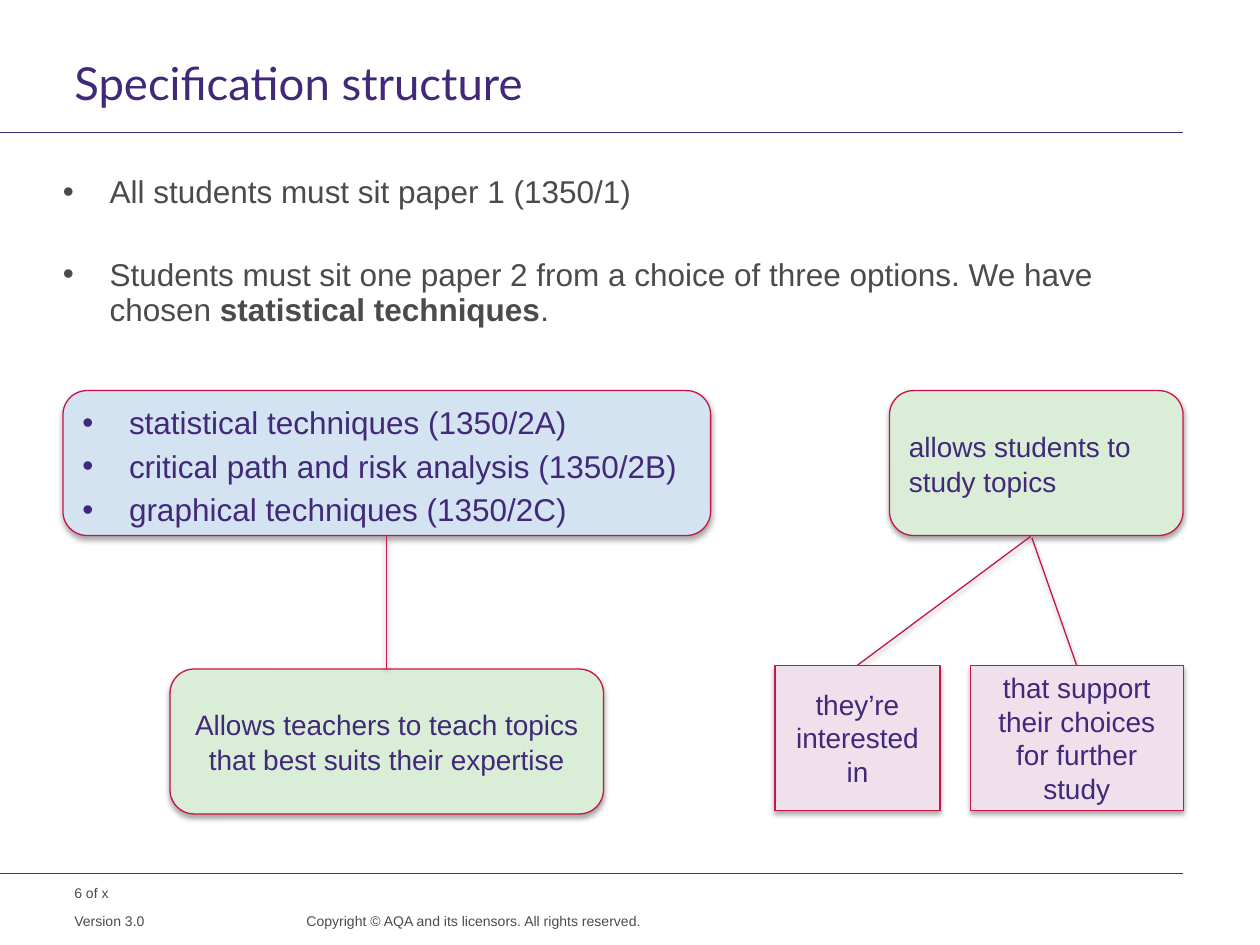
from dataclasses import dataclass
from typing import Optional

from lxml.etree import SubElement
from pptx import Presentation
from pptx.dml.color import RGBColor
from pptx.enum.shapes import MSO_CONNECTOR, MSO_SHAPE as Preset
from pptx.enum.text import MSO_ANCHOR as Anchor, PP_ALIGN as Align
from pptx.oxml.ns import qn
from pptx.util import Emu, Inches, Pt


@dataclass(frozen=True)
class Theme:
    heading_font: str = "Lato"
    body_font: str = "Arial"
    purple: str = "412878"
    grey: str = "4B4B4B"
    red: str = "C81448"
    link_red: str = "C8194B"
    blue_fill: str = "D3E3F2"
    green_fill: str = "D9EDD7"
    pink_fill: str = "EFE0EC"
    title_size: int = 26
    body_size: int = 18
    box_size: int = 16
    footer_size: int = 8
    rule_width: float = 0.6
    outline_width: float = 0.75


@dataclass(frozen=True)
class Area:
    """Columns and rows from the top left of the slide grid."""
    col: float
    row: float
    cols: float
    rows: float


@dataclass(frozen=True)
class Box:
    area: Area
    preset: Preset
    fill: str
    paragraphs: tuple
    text_format: dict
    pointer: Optional[tuple] = None


THEME = Theme()
COLUMNS, ROWS = 100, 75
LEFT, INDENTED, RIGHT = 5, 5.9, 93.9
BOX_ROWS = 11.5
UPPER, LOWER, LOWER_LEFT = 31, 52.8, 53.1
HANGING = 0.37

presentation = Presentation()
presentation.slide_width, presentation.slide_height = Inches(10), Inches(7.5)
slide = presentation.slides.add_slide(presentation.slide_layouts[6])


def x(col: float) -> Emu:
    return Emu(round(presentation.slide_width * col / COLUMNS))


def y(row: float) -> Emu:
    return Emu(round(presentation.slide_height * row / ROWS))


def frame(area: Area) -> tuple:
    return x(area.col), y(area.row), x(area.cols), y(area.rows)


def write(shape, paragraphs: tuple, *, size: float, color: str = THEME.purple,
          font: str = THEME.body_font, align=Align.LEFT, anchor=Anchor.TOP,
          spacing=1.0, before: float = 0, bullet: bool = False,
          insets: tuple = (0, 0, 0, 0)) -> None:
    """Fill a shape; a paragraph is a tuple of runs, every second one bold."""
    text = shape.text_frame
    text.word_wrap = True
    text.vertical_anchor = anchor
    (text.margin_left, text.margin_top,
     text.margin_right, text.margin_bottom) = map(Inches, insets)
    for index, runs in enumerate(paragraphs):
        paragraph = text.add_paragraph() if index else text.paragraphs[0]
        if bullet:
            properties = paragraph._p.get_or_add_pPr()
            properties.set("marL", str(Inches(HANGING)))
            properties.set("indent", str(-Inches(HANGING)))
            SubElement(properties, qn("a:buFont"), typeface="Arial")
            SubElement(properties, qn("a:buChar"), char="•")
        paragraph.alignment = align
        paragraph.line_spacing = spacing
        paragraph.space_before = Pt(before if index else 0)
        paragraph.font.size = Pt(size)
        for position, words in enumerate(runs):
            run = paragraph.add_run()
            run.text = words
            run.font.name, run.font.size = font, Pt(size)
            run.font.bold = position % 2 == 1
            run.font.color.rgb = RGBColor.from_string(color)


def add_text(area: Area, *paragraphs: tuple, **text_format) -> None:
    write(slide.shapes.add_textbox(*frame(area)), paragraphs, **text_format)


def set_line(shape, color: str, width: float) -> None:
    shape.line.color.rgb = RGBColor.from_string(color)
    shape.line.width = Pt(width)


def set_effects(shape, opacity: int = 0, distance: float = 1.8) -> None:
    """Give a downward shadow, or none when opacity is zero."""
    effects = SubElement(shape.element.spPr, qn("a:effectLst"))
    if opacity:
        shadow = SubElement(effects, qn("a:outerShdw"), blurRad=str(Pt(3.1)),
                            dist=str(Pt(distance)), dir="5400000", rotWithShape="0")
        black = SubElement(shadow, qn("a:srgbClr"), val="000000")
        SubElement(black, qn("a:alpha"), val=str(opacity * 1000))


def add_line(start: tuple, end: tuple, color: str, width: float, **shadow) -> None:
    line = slide.shapes.add_connector(
        MSO_CONNECTOR.STRAIGHT, x(start[0]), y(start[1]), x(end[0]), y(end[1]))
    set_line(line, color, width)
    set_effects(line, **shadow)


def add_box(box: Box) -> None:
    shape = slide.shapes.add_shape(box.preset, *frame(box.area))
    for index, value in enumerate(box.pointer or ()):
        shape.adjustments[index] = value
    shape.fill.solid()
    shape.fill.fore_color.rgb = RGBColor.from_string(box.fill)
    set_line(shape, THEME.red, THEME.outline_width)
    set_effects(shape, opacity=35)
    write(shape, box.paragraphs, anchor=Anchor.MIDDLE,
          insets=(0.1, 0.05, 0.1, 0.05), **box.text_format)


for rule_row in (10.5, 69.3):
    add_line((0, rule_row), (RIGHT, rule_row), THEME.purple, THEME.rule_width)

add_text(Area(INDENTED, 4.8, RIGHT - INDENTED, 4.7), ("Specification structure",),
         size=THEME.title_size, font=THEME.heading_font, spacing=Pt(28))
add_text(Area(LEFT, 13.9, 88, 16),
         ("All students must sit paper 1 (1350/1)",),
         ("Students must sit one paper 2 from a choice of three options. We have chosen ",
          "statistical techniques", "."),
         size=THEME.body_size, color=THEME.grey, spacing=Pt(20), before=27.2,
         bullet=True, insets=(0, 0, 0.1, 0))

footer = dict(size=THEME.footer_size, color=THEME.grey)
add_text(Area(INDENTED, 70.2, 15.7, 1.4), ("6 of x",), **footer)
add_text(Area(INDENTED, 72.4, 14.7, 1.3), ("Version 3.0",), spacing=Pt(10), **footer)
add_text(Area(21.6, 72.4, 29.3, 2.6),
         ("Copyright © AQA and its licensors. All rights reserved.",),
         spacing=Pt(10), align=Align.RIGHT, **footer)

rounded, callout = Preset.FLOWCHART_ALTERNATE_PROCESS, Preset.LINE_CALLOUT_1
centred = dict(size=THEME.box_size, align=Align.CENTER)
options = Area(LEFT, UPPER, 51.4, BOX_ROWS)
boxes = (
    Box(Area(RIGHT - 23.3, UPPER, 23.3, BOX_ROWS), rounded, THEME.green_fill,
        (("allows students to study topics",),),
        dict(size=THEME.box_size, spacing=Pt(20))),
    Box(options, rounded, THEME.blue_fill,
        (("statistical techniques (1350/2A)",),
         ("critical path and risk analysis (1350/2B)",),
         ("graphical techniques (1350/2C)",)),
        dict(size=THEME.body_size, spacing=1.15, bullet=True)),
    Box(Area(13.5, LOWER_LEFT, 34.4, BOX_ROWS), rounded, THEME.green_fill,
        (("Allows teachers to teach topics that best suits their expertise",),),
        dict(centred, spacing=Pt(20))),
    Box(Area(61.5, LOWER, 13.1, BOX_ROWS), callout, THEME.pink_fill,
        (("they’re interested in",),), centred, (0, 0.5, -0.89, 1.55)),
    Box(Area(RIGHT - 16.9, LOWER, 16.9, BOX_ROWS), callout, THEME.pink_fill,
        (("that support their choices for further study",),), centred,
        (-0.88, 0.29, 0, 0.5)),
)
for box in boxes:
    add_box(box)

options_centre = options.col + options.cols / 2
add_line((options_centre, UPPER + BOX_ROWS), (options_centre, LOWER_LEFT),
         THEME.link_red, THEME.outline_width, opacity=38, distance=1.6)

presentation.save("out.pptx")
